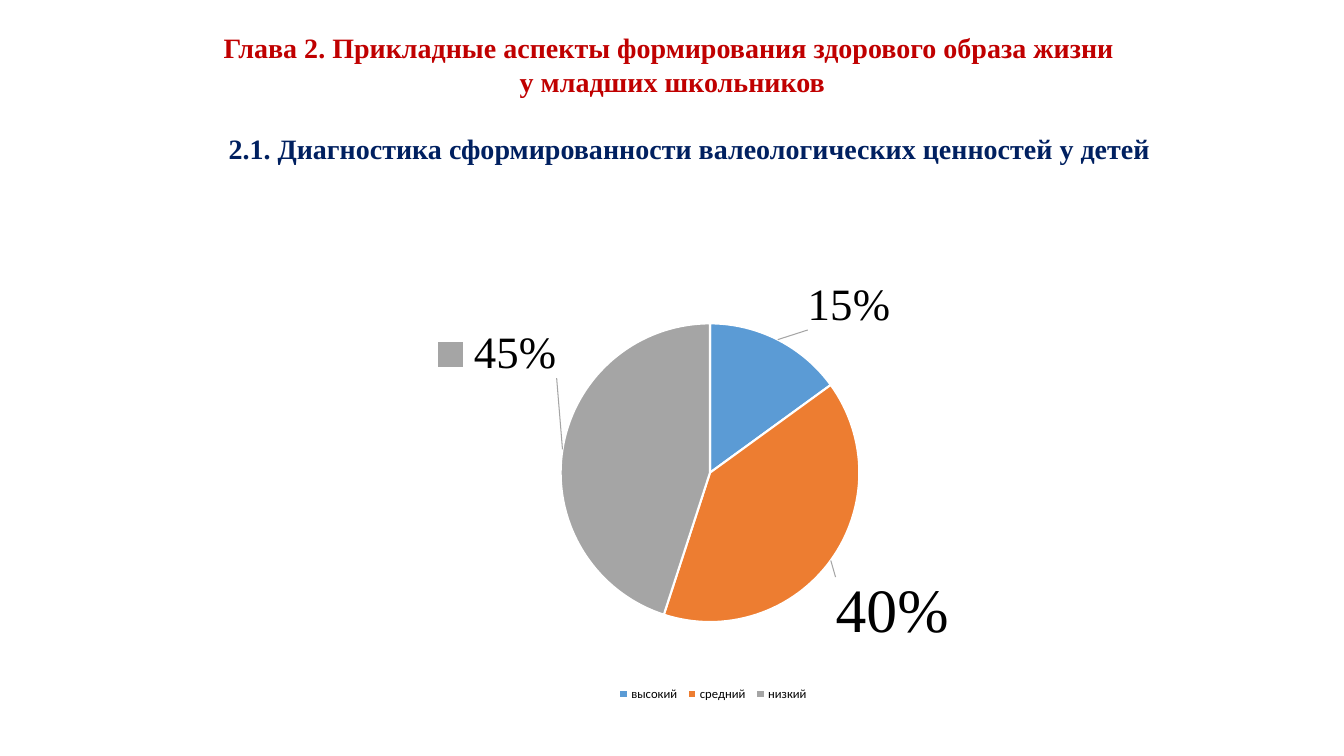
from lxml import etree
from pptx import Presentation
from pptx import util as u
from pptx.chart import data as chart_data
from pptx.dml import color
from pptx.enum import chart as chart_enum, text
from pptx.oxml import parse_xml, ns

COLORS = {
    "heading": "C00000", "subheading": "002060", "black": "000000",
    "white": "FFFFFF", "high": "5B9BD5", "medium": "ED7D31", "low": "A5A5A5",
}


def rgb(name):
    return color.RGBColor.from_string(COLORS[name])


def add_line(paragraph, content, fill, indent=0, before=0):
    paragraph.alignment = text.PP_ALIGN.CENTER
    paragraph.line_spacing = u.Pt(24)
    paragraph.space_before = u.Pt(before)
    paragraph._p.get_or_add_pPr().set("marL", str(u.Cm(indent)))
    run = paragraph.add_run()
    run.text = content
    run.font.name = "Times New Roman"
    run.font.size = u.Pt(20)
    run.font.bold = True
    run.font.color.rgb = rgb(fill)


presentation = Presentation()
presentation.slide_width = u.Cm(33.87)
presentation.slide_height = u.Cm(19.05)
slide = presentation.slides.add_slide(presentation.slide_layouts[6])

title = slide.shapes.add_textbox(u.Cm(2.34), u.Cm(0.78), u.Cm(29.21), u.Cm(3.92))
frame = title.text_frame
frame.word_wrap = True
frame.margin_top = frame.margin_bottom = 0
add_line(frame.paragraphs[0],
         "Глава 2. Прикладные аспекты формирования здорового образа жизни ", "heading")
add_line(frame.add_paragraph(), "у младших школьников", "heading")
add_line(frame.add_paragraph(),
         "2.1. Диагностика сформированности валеологических ценностей у детей",
         "subheading", indent=0.86, before=24)

levels = chart_data.CategoryChartData(number_format="0%")
levels.categories = ["высокий ", "средний ", "низкий "]
levels.add_series("Series 1", (0.15, 0.4, 0.45))
chart = slide.shapes.add_chart(
    chart_enum.XL_CHART_TYPE.PIE, u.Cm(6.53), u.Cm(6.71), u.Cm(22.96), u.Cm(11.07), levels
).chart
chart.has_title = False
chart.font.name = "Calibri"
chart.font.size = u.Pt(10)
chart.font.color.rgb = rgb("black")
chart.has_legend = True
chart.legend.position = chart_enum.XL_LEGEND_POSITION.BOTTOM
chart.legend.include_in_layout = False
chart.legend.font.name = "Calibri"
chart.legend.font.size = u.Pt(9)
chart.legend.font.color.rgb = rgb("black")

plot = chart.plots[0]
plot.vary_by_categories = True
series = plot.series[0]
labels = series.data_labels
labels.show_value = True
labels.number_format = "0%"
labels.number_format_is_linked = False
labels.position = chart_enum.XL_LABEL_POSITION.OUTSIDE_END
labels.font.name = "Calibri"
labels.font.size = u.Pt(9)
labels.font.color.rgb = rgb("black")


def layout_xml(target, **values):
    modes = "".join(f'<c:{key} val="{value}"/>' for key, value in values.items())
    return parse_xml(f'<c:layout {ns.nsdecls("c")}><c:manualLayout>{target}{modes}'
                     '</c:manualLayout></c:layout>')


slices = [("high", 32, 0.03, -0.01), ("medium", 44, 0, 0.03), ("low", 32, 0, -0.16)]
for index, (name, size, shift_x, shift_y) in enumerate(slices):
    point = series.points[index]
    point.format.fill.solid()
    point.format.fill.fore_color.rgb = rgb(name)
    point.format.line.color.rgb = rgb("white")
    point.format.line.width = u.Pt(1.5)
    label = point.data_label
    label.font.name = "Times New Roman"
    label.font.size = u.Pt(size)
    label.font.color.rgb = rgb("black")
    label.position = chart_enum.XL_LABEL_POSITION.OUTSIDE_END
    label_xml = series._element.xpath("c:dLbls/c:dLbl")[index]
    label_xml.insert(1, layout_xml("", x=shift_x, y=shift_y))
    label_xml.xpath("c:showLegendKey")[0].set("val", "1" if name == "low" else "0")

labels_xml = series._element.xpath("c:dLbls")[0]
for leader_flag in labels_xml.xpath("c:showLeaderLines"):
    labels_xml.remove(leader_flag)
etree.SubElement(labels_xml, ns.qn("c:showLeaderLines")).set("val", "1")
labels_xml.append(parse_xml(
    f'<c:leaderLines {ns.nsdecls("c", "a")}><c:spPr><a:ln w="9525"><a:solidFill>'
    f'<a:srgbClr val="{COLORS["low"]}"/></a:solidFill></a:ln></c:spPr></c:leaderLines>'))

plot_area = chart._chartSpace.xpath("c:chart/c:plotArea")[0]
for old_layout in plot_area.xpath("c:layout"):
    plot_area.remove(old_layout)
plot_area.insert(0, layout_xml('<c:layoutTarget val="inner"/>', xMode="edge", yMode="edge",
                               x=0.33, y=0.13, w=0.33, h=0.68))

presentation.save("out.pptx")
